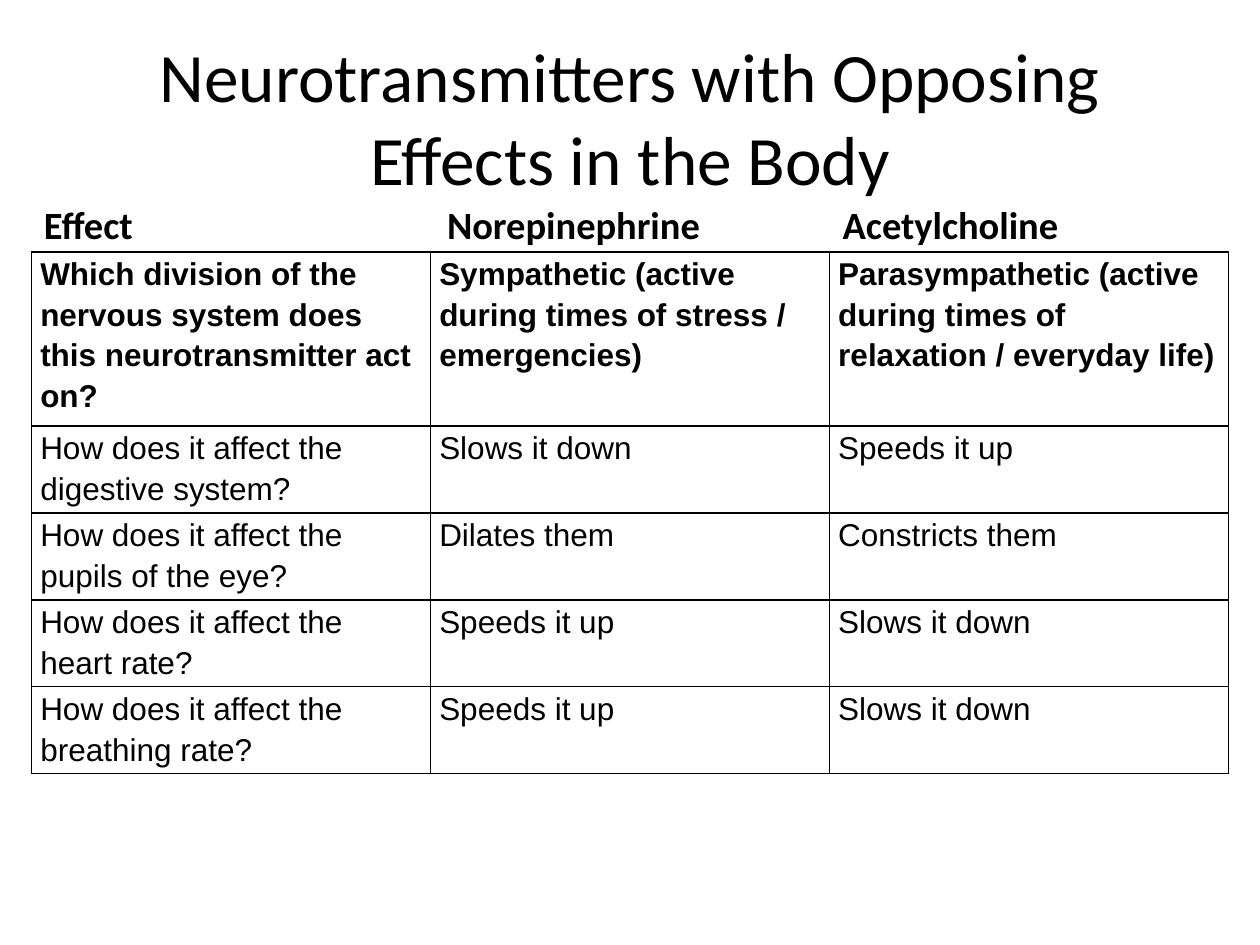
from lxml.etree import SubElement as Sub
from pptx import Presentation
from pptx.dml.color import RGBColor
from pptx.enum.text import MSO_ANCHOR as Anchor, PP_ALIGN as Align
from pptx.oxml.ns import qn
from pptx.util import Inches, Pt

BLACK = RGBColor(0, 0, 0)
HEADS = ["Effect", "Norepinephrine", "Acetylcholine"]
STOPS = [3.2, 6.34]
ROWS = [
    ["Which division of the nervous system does this neurotransmitter act on?",
     "Sympathetic (active during times of stress / emergencies)",
     "Parasympathetic (active during times of relaxation / everyday life)"],
    ["How does it affect the digestive system?", "Slows it down", "Speeds it up"],
    ["How does it affect the pupils of the eye?", "Dilates them", "Constricts them"],
    ["How does it affect the heart rate?", "Speeds it up", "Slows it down"],
    ["How does it affect the breathing rate?", "Speeds it up", "Slows it down"],
]
HIGHS = [1.29] + [0.64] * 4


def write(frame, text, size=18, font="Arial", bold=False, align=Align.LEFT, space=1.0):
    """Put one formatted paragraph in a text frame and return it."""
    frame.word_wrap = True
    para = frame.paragraphs[0]
    para.alignment = align
    para.line_spacing = space
    run = para.add_run()
    run.text = text
    run.font.size = Pt(size)
    run.font.name = font
    run.font.bold = bold
    run.font.color.rgb = BLACK
    return para


def add_box(slide, left, top, width, height, anchor=Anchor.TOP):
    """Add an empty text box and return its frame."""
    box = slide.shapes.add_textbox(*map(Inches, (left, top, width, height)))
    box.text_frame.vertical_anchor = anchor
    return box.text_frame


def add_tabs(para, stops):
    """Set left tab stops, in inches, on a paragraph."""
    tabs = Sub(para._p.get_or_add_pPr(), qn("a:tabLst"))
    for stop in stops:
        Sub(tabs, qn("a:tab"), pos=str(Inches(stop)), algn="l")


def edge(cell):
    """Draw a thin black border on all four sides of a cell."""
    props = cell._tc.get_or_add_tcPr()
    for side in ("lnL", "lnR", "lnT", "lnB"):
        line = Sub(props, qn(f"a:{side}"), w=str(Pt(1)))
        fill = Sub(line, qn("a:solidFill"))
        Sub(fill, qn("a:srgbClr"), val=str(BLACK))


def add_grid(slide, left, top, width):
    """Add the table of effects with a bold first row."""
    size = len(ROWS), len(HEADS)
    area = map(Inches, (left, top, width, sum(HIGHS)))
    table = slide.shapes.add_table(*size, *area).table
    table.first_row = table.horz_banding = False
    for row, (texts, high) in enumerate(zip(ROWS, HIGHS)):
        table.rows[row].height = Inches(high)
        for col, text in enumerate(texts):
            cell = table.cell(row, col)
            cell.margin_left = cell.margin_right = Inches(0.07)
            cell.margin_top = cell.margin_bottom = 0
            edge(cell)
            cell.fill.background()
            write(cell.text_frame, text, bold=row == 0, space=1.15)


def main():
    """Build the slide and save it."""
    deck = Presentation()
    deck.slide_width, deck.slide_height = Inches(10), Inches(7.5)
    slide = deck.slides.add_slide(deck.slide_layouts[6])
    title = add_box(slide, 0.5, 0.3, 9, 1.25, Anchor.MIDDLE)
    write(title, "Neurotransmitters with Opposing Effects in the Body",
          size=39.6, font="Calibri", align=Align.CENTER)
    add_grid(slide, 0.25, 2, 9.5)
    heads = add_box(slide, 0.25, 1.55, 9.5, 0.47)
    para = write(heads, "\t".join(HEADS), size=22, font="Calibri", bold=True)
    add_tabs(para, STOPS)
    deck.save("out.pptx")


if __name__ == "__main__":
    main()
